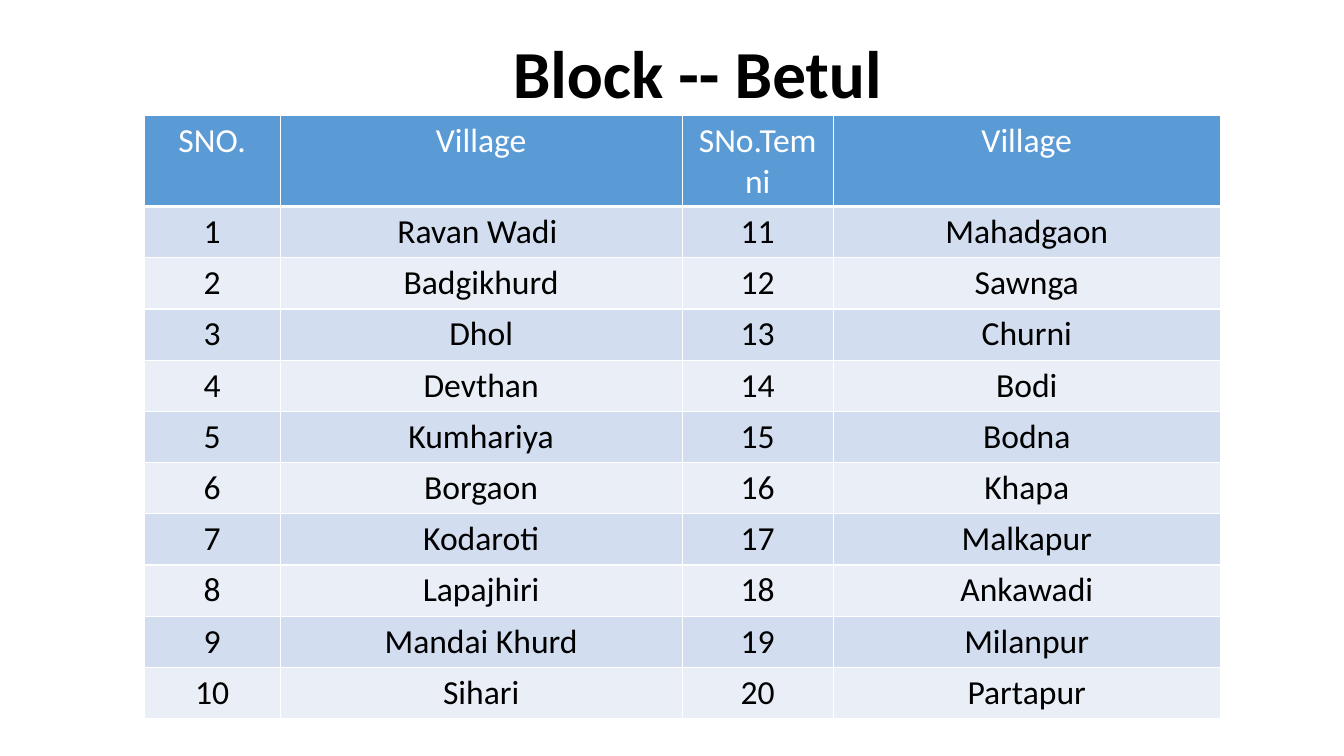
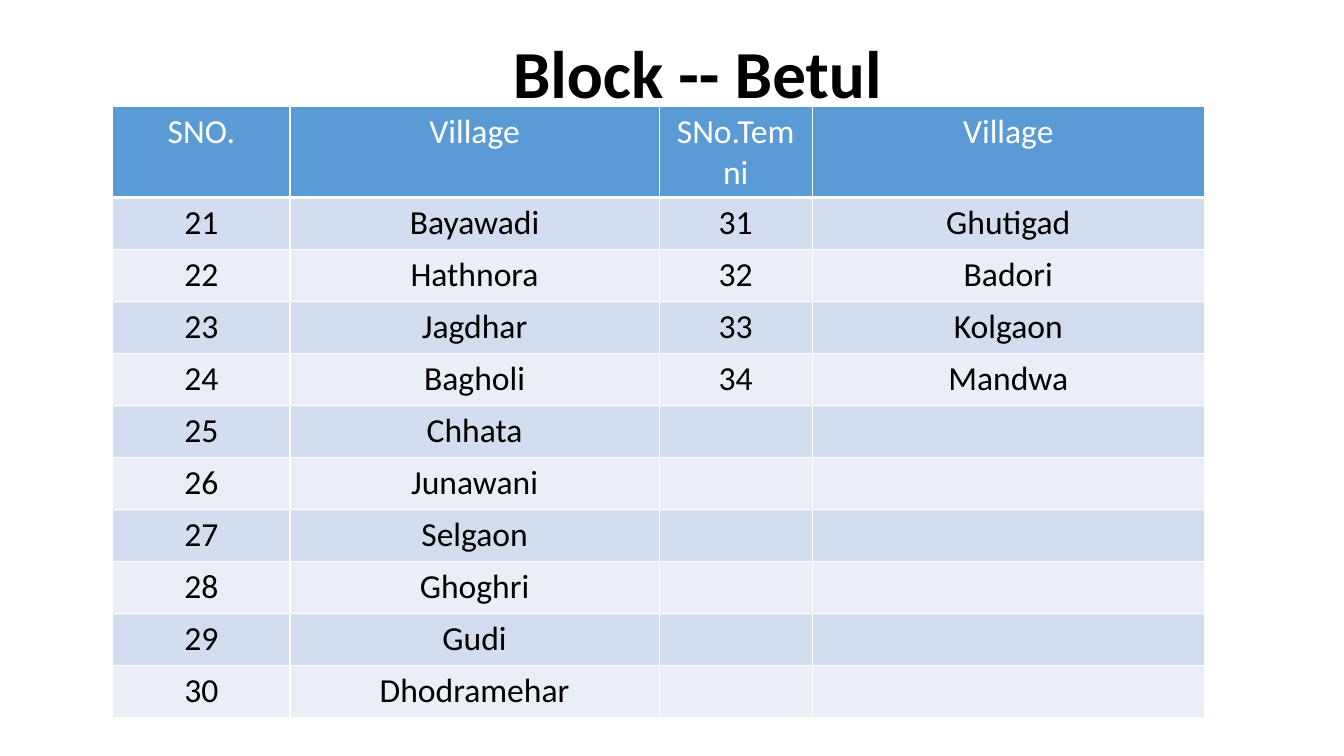
"""Build two slides listing the villages of the Betul block."""
from dataclasses import dataclass
from itertools import zip_longest

from lxml.etree import SubElement
from pptx import Presentation
from pptx.dml.color import RGBColor
from pptx.enum.text import MSO_ANCHOR as Anchor, PP_ALIGN as Align
from pptx.oxml.ns import qn
from pptx.util import Cm, Pt

COLORS = {
    "header": "5B9BD5",
    "odd": "D2DEEF",
    "even": "EAEFF7",
    "grid": "FFFFFF",
    "header_text": "FFFFFF",
    "text": "000000",
}
FONT = "Calibri"
TITLE = "Block -- Betul"
HEADINGS = ("SNO.", "Village", "SNo.Temni", "Village")
VILLAGES_PER_COLUMN = 10


@dataclass(frozen=True)
class VillagePage:
    left: float
    top: float
    column_widths: tuple[float, ...]
    header_height: float
    row_height: float
    first_number: int
    villages: tuple[str, ...]

    def rows(self) -> list[tuple[str, ...]]:
        numbered = [(str(number), village)
                    for number, village in enumerate(self.villages, self.first_number)]
        pairs = zip_longest(numbered[:VILLAGES_PER_COLUMN],
                            numbered[VILLAGES_PER_COLUMN:], fillvalue=("", ""))
        return [HEADINGS, *(near + far for near, far in pairs)]


PAGES = (
    VillagePage(
        3.63, 2.92, (3.43, 10.13, 3.81, 9.75), 1.47, 1.29, 1,
        ("Ravan Wadi ", "Badgikhurd", "Dhol", "Devthan", "Kumhariya",
         "Borgaon", "Kodaroti", "Lapajhiri", "Mandai Khurd", "Sihari",
         "Mahadgaon", "Sawnga", "Churni", "Bodi", "Bodna",
         "Khapa", "Malkapur", "Ankawadi", "Milanpur", "Partapur")),
    VillagePage(
        2.84, 2.69, (4.47, 9.3, 3.86, 9.88), 1.31, 1.31, 21,
        ("Bayawadi", "Hathnora", "Jagdhar", "Bagholi", "Chhata",
         "Junawani", "Selgaon", "Ghoghri", "Gudi", "Dhodramehar",
         "Ghutigad", "Badori", "Kolgaon", "Mandwa")),
)


def add_text(paragraph, text: str, size: int, color: str, bold: bool = False) -> None:
    paragraph.alignment = Align.CENTER
    run = paragraph.add_run()
    run.text = text
    run.font.name = FONT
    run.font.size = Pt(size)
    run.font.bold = bold
    run.font.color.rgb = RGBColor.from_string(COLORS[color])


def add_title(slide) -> None:
    frame = slide.shapes.add_textbox(Cm(6.78), Cm(1.07), Cm(21.59), Cm(1.9)).text_frame
    frame.word_wrap = True
    frame.vertical_anchor = Anchor.BOTTOM
    heading = frame.paragraphs[0]
    heading.line_spacing = 0.9
    add_text(heading, TITLE, 48, "text", bold=True)


def set_borders(cell, bottom_width: int) -> None:
    properties = cell._tc.get_or_add_tcPr()
    for side, width in (("L", 1), ("R", 1), ("T", 1), ("B", bottom_width)):
        line = SubElement(properties, qn(f"a:ln{side}"), w=str(Pt(width)))
        fill = SubElement(line, qn("a:solidFill"))
        SubElement(fill, qn("a:srgbClr"), val=COLORS["grid"])


def fill_cell(cell, text: str, row_number: int) -> None:
    is_header = row_number == 0
    set_borders(cell, 3 if is_header else 1)
    band = "header" if is_header else "odd" if row_number % 2 else "even"
    cell.fill.solid()
    cell.fill.fore_color.rgb = RGBColor.from_string(COLORS[band])
    if text:
        add_text(cell.text_frame.paragraphs[0], text, 24,
                 "header_text" if is_header else "text")


def add_village_table(slide, page: VillagePage) -> None:
    rows = page.rows()
    height = page.header_height + page.row_height * (len(rows) - 1)
    table = slide.shapes.add_table(
        len(rows), len(HEADINGS), Cm(page.left), Cm(page.top),
        Cm(sum(page.column_widths)), Cm(height)).table
    for column, width in zip(table.columns, page.column_widths):
        column.width = Cm(width)
    for row_number, (row, texts) in enumerate(zip(table.rows, rows)):
        row.height = Cm(page.row_height if row_number else page.header_height)
        for cell, text in zip(row.cells, texts):
            fill_cell(cell, text, row_number)


def main() -> None:
    deck = Presentation()
    deck.slide_width, deck.slide_height = Cm(33.87), Cm(19.05)
    blank = deck.slide_layouts[6]
    for page in PAGES:
        slide = deck.slides.add_slide(blank)
        add_title(slide)
        add_village_table(slide, page)
    deck.save("out.pptx")


if __name__ == "__main__":
    main()
